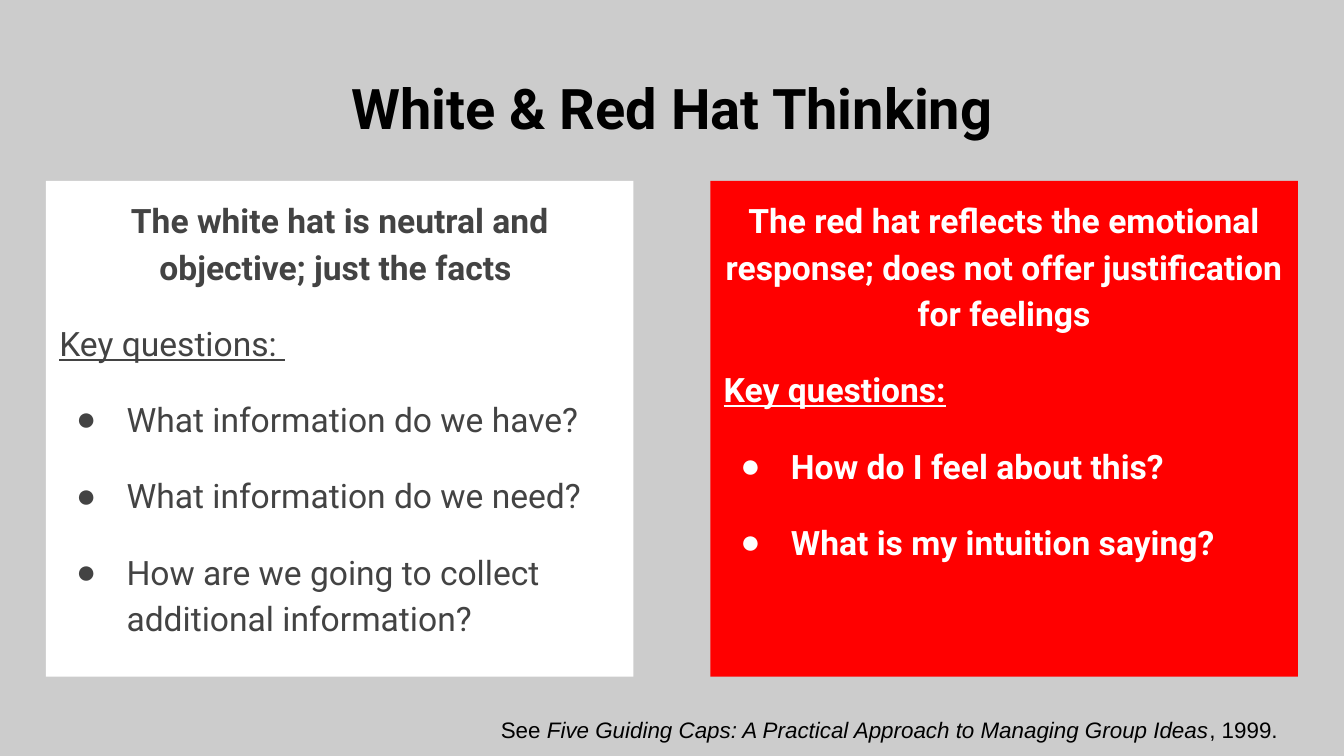
import pptx
import pptx.dml.color
import pptx.enum.text
import pptx.oxml
import pptx.oxml.ns
import pptx.util

Pt = pptx.util.Pt
ALIGN = pptx.enum.text.PP_ALIGN


def color(code):
    return pptx.dml.color.RGBColor.from_string(code)


def write(para, text, size=18, font="Roboto", ink="000000", **marks):
    """Add a run; marks are bold, italic or underline."""
    run = para.add_run()
    run.text = text
    run.font.size = Pt(size)
    run.font.name = font
    run.font.color.rgb = color(ink)
    for name, value in marks.items():
        setattr(run.font, name, value)


def bullet(para, ink=None):
    """Give the paragraph a dot in the ink colour, or no bullet at all."""
    props = para._p.get_or_add_pPr()
    props.set("marL", str(Pt(36) if ink else 0))
    props.set("indent", str(Pt(-27) if ink else 0))
    space = pptx.oxml.ns.nsdecls("a")
    if ink:
        parts = [
            f'<a:buClr {space}><a:srgbClr val="{ink}"/></a:buClr>',
            f'<a:buFont {space} typeface="Arial"/>',
            f'<a:buChar {space} char="●"/>',
        ]
    else:
        parts = [f"<a:buNone {space}/>"]
    for part in parts:
        props.append(pptx.oxml.parse_xml(part))


class Deck:
    """Holds the shared style and the current slide."""

    def __init__(self, back):
        self.file = pptx.Presentation()
        self.file.slide_width, self.file.slide_height = Pt(720), Pt(405)
        self.slide = self.file.slides.add_slide(self.file.slide_layouts[3])
        fill = self.slide.background.fill
        fill.solid()
        fill.fore_color.rgb = color(back)

    def frame(self, shape, left, top, width, height):
        """Place the shape and return its text frame, set up for text."""
        shape.left, shape.top = Pt(left), Pt(top)
        shape.width, shape.height = Pt(width), Pt(height)
        frame = shape.text_frame
        frame.word_wrap = True
        frame.auto_size = pptx.enum.text.MSO_AUTO_SIZE.NONE
        frame.vertical_anchor = pptx.enum.text.MSO_ANCHOR.TOP
        for side in ("left", "top", "right", "bottom"):
            setattr(frame, f"margin_{side}", Pt(7.2))
        return frame

    def title(self, text):
        frame = self.frame(self.slide.shapes.title, 24.5, 32.4, 671, 47.5)
        para = frame.paragraphs[0]
        para.alignment = ALIGN.CENTER
        write(para, text, size=30, bold=True)

    def panel(self, index, left, fill, ink, bold, texts):
        """Fill a body placeholder: heading, lead-in, then bulleted questions."""
        shape = self.slide.placeholders[index]
        frame = self.frame(shape, left, 96.9, 314.8, 265.7)
        shape.fill.solid()
        shape.fill.fore_color.rgb = color(fill)
        for i, text in enumerate(texts):
            para = frame.paragraphs[0] if i == 0 else frame.add_paragraph()
            para.alignment = ALIGN.CENTER if i == 0 else ALIGN.LEFT
            para.line_spacing = 1.15
            para.space_before, para.space_after = Pt(0), Pt(16)
            bullet(para, ink if i > 1 else None)
            write(para, text, ink=ink, bold=bold or i == 0, underline=i == 1)

    def note(self, *parts):
        """Add the source line from pairs of text and italic flag."""
        box = self.slide.shapes.add_textbox(0, 0, 0, 0)
        para = self.frame(box, 261.2, 376.4, 447, 18.7).paragraphs[0]
        for text, italic in parts:
            write(para, text, size=12, font="Arial", italic=italic)


def main():
    deck = Deck("CCCCCC")
    deck.title("White & Red Hat Thinking")
    deck.panel(1, 24.6, "FFFFFF", "434343", False, [
        "The white hat is neutral and objective; just the facts ",
        "Key questions: ",
        "What information do we have?",
        "What information do we need?",
        "How are we going to collect additional information?",
    ])
    deck.panel(2, 380.5, "FF0000", "FFFFFF", True, [
        "The red hat reflects the emotional response; "
        "does not offer justification for feelings",
        "Key questions:",
        "How do I feel about this?",
        "What is my intuition saying?",
    ])
    deck.note(
        ("See ", False),
        ("Five Guiding Caps: A Practical Approach to Managing Group Ideas", True),
        (", 1999.", False),
    )
    deck.file.save("out.pptx")


if __name__ == "__main__":
    main()
